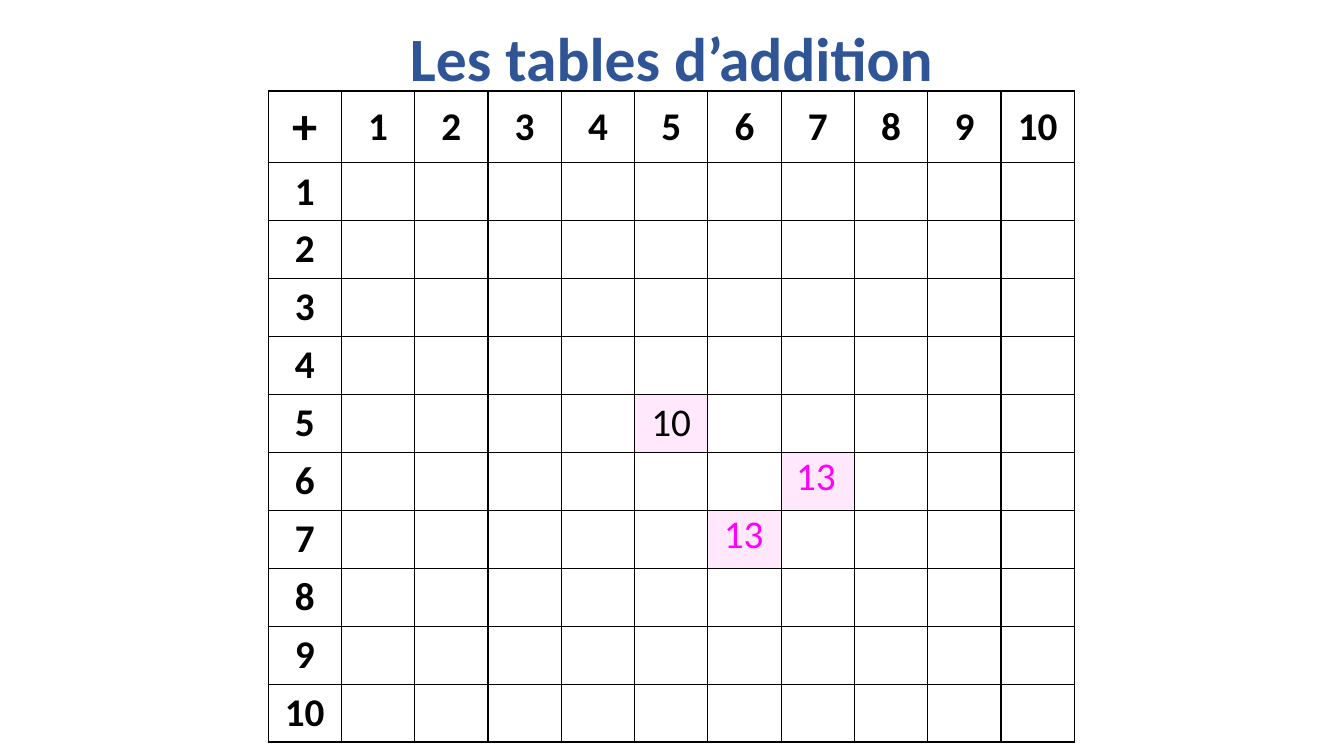
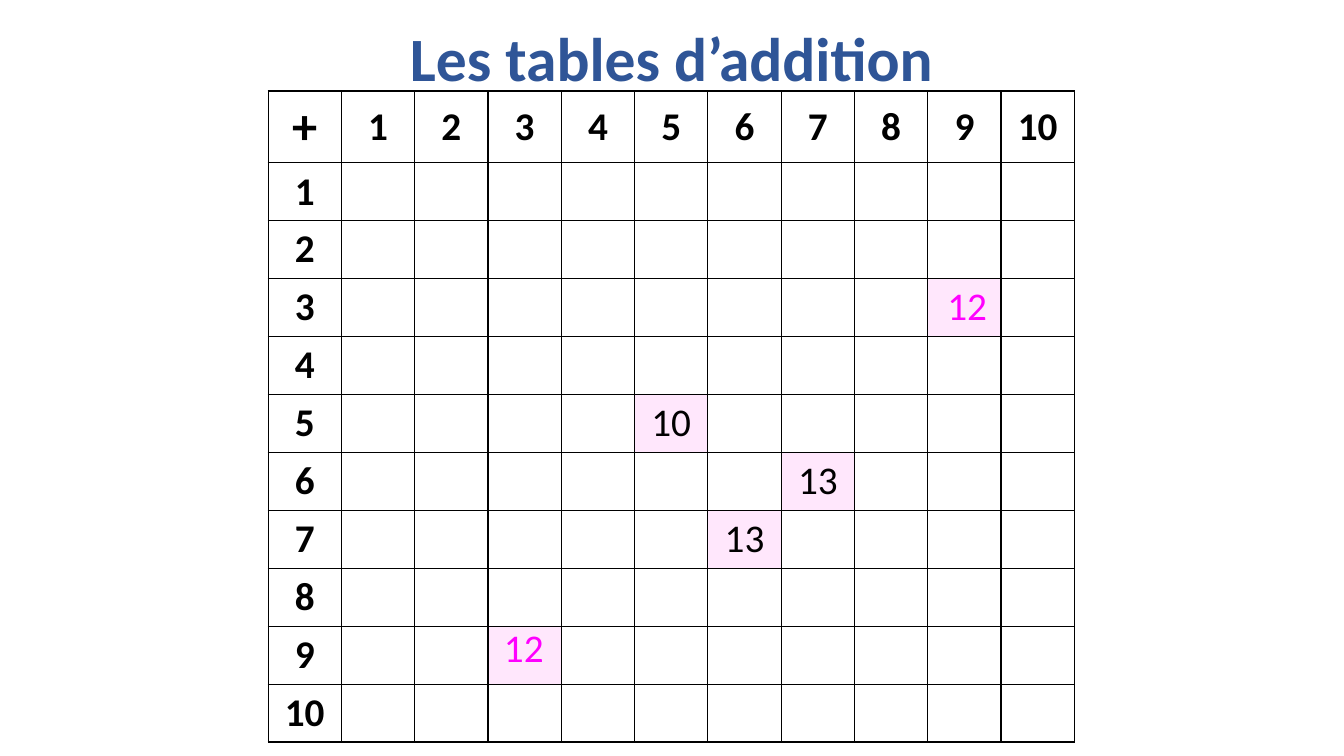
from lxml import etree
from pptx import Presentation
from pptx.dml.color import RGBColor
from pptx.enum.text import MSO_ANCHOR, MSO_AUTO_SIZE, PP_ALIGN
from pptx.oxml.ns import qn
from pptx.util import Pt

MIDDLE, TOP = MSO_ANCHOR.MIDDLE, MSO_ANCHOR.TOP
CENTER = PP_ALIGN.CENTER
GROW = MSO_AUTO_SIZE.SHAPE_TO_FIT_TEXT

COLORS = {
    "title": "2F5597",
    "text": "000000",
    "border": "000000",
    "paper": "FFFFFF",
    "highlight": "FFE7FC",
    "answer": "FF00FF",
}
FONT = "Calibri"
TITLE = "Les tables d’addition"
NUMBERS = range(1, 11)

# "known" lists (row, column) sums already in the table;
# "new" lists (row, column, shift right, shift down) sums laid over it.
SLIDES = [
    {"known": [(5, 5)],
     "new": [(7, 6, 0, -4.6), (6, 7, -0.8, -4.2)]},
    {"known": [(5, 5), (6, 7), (7, 6)],
     "new": [(9, 3, 0, -6), (3, 9, 2.5, -1.7)]},
]

SLIDE_SIZE = (960, 540)
TITLE_BOX = (66, -8, 828, 104.4)
TABLE_LEFT, TABLE_TOP = 191.5, 65
COLUMN_WIDTH = 52.36
HEADER_HEIGHT, ROW_HEIGHT = 51.2, 41.4


def write(frame, text, size=28, color="text", bold=False, spacing=None):
    paragraph = frame.paragraphs[0]
    paragraph.alignment = CENTER
    if spacing:
        paragraph.line_spacing = spacing
    run = paragraph.add_run()
    run.text = str(text)
    run.font.name = FONT
    run.font.size = Pt(size)
    run.font.bold = bold
    run.font.color.rgb = RGBColor.from_string(COLORS[color])


def add_text(slide, box, text, anchor=TOP, grow=False, **style):
    shape = slide.shapes.add_textbox(*(Pt(length) for length in box))
    frame = shape.text_frame
    frame.word_wrap = True
    frame.vertical_anchor = anchor
    if grow:
        frame.auto_size = GROW
    write(frame, text, **style)


def add_borders(cell):
    properties = cell._tc.get_or_add_tcPr()
    for side in ("a:lnL", "a:lnR", "a:lnT", "a:lnB"):
        line = etree.SubElement(properties, qn(side), w=str(Pt(1)))
        fill = etree.SubElement(line, qn("a:solidFill"))
        etree.SubElement(fill, qn("a:srgbClr"), val=COLORS["border"])


def fill_cell(cell, color):
    cell.fill.solid()
    cell.fill.fore_color.rgb = RGBColor.from_string(COLORS[color])


def add_addition_table(slide, known, highlighted):
    count = len(NUMBERS) + 1
    height = HEADER_HEIGHT + len(NUMBERS) * ROW_HEIGHT
    table = slide.shapes.add_table(
        count, count, Pt(TABLE_LEFT), Pt(TABLE_TOP),
        Pt(count * COLUMN_WIDTH), Pt(height)).table
    table.first_row = table.horz_banding = False
    for column in table.columns:
        column.width = Pt(COLUMN_WIDTH)
    for index, row in enumerate(table.rows):
        row.height = Pt(ROW_HEIGHT if index else HEADER_HEIGHT)
        for position, cell in enumerate(row.cells):
            cell.vertical_anchor = MIDDLE
            add_borders(cell)
            if index == 0 or position == 0:
                fill_cell(cell, "paper")
                is_corner = index == position
                write(cell.text_frame, "+" if is_corner else index + position,
                      size=36 if is_corner else 28, bold=True)
            elif (index, position) in highlighted:
                fill_cell(cell, "highlight")
            else:
                cell.fill.background()
            if (index, position) in known:
                write(cell.text_frame, index + position)


def add_new_sum(slide, row, column, shift_right, shift_down):
    left = TABLE_LEFT + column * COLUMN_WIDTH + shift_right
    top = TABLE_TOP + HEADER_HEIGHT + (row - 1) * ROW_HEIGHT + shift_down
    add_text(slide, (left, top, 51.1, 41.2), row + column,
             color="answer", grow=True)


def main():
    presentation = Presentation()
    presentation.slide_width, presentation.slide_height = map(Pt, SLIDE_SIZE)
    for content in SLIDES:
        slide = presentation.slides.add_slide(presentation.slide_layouts[6])
        add_text(slide, TITLE_BOX, TITLE, anchor=MIDDLE, size=44,
                 color="title", bold=True, spacing=0.9)
        new_cells = [(row, column) for row, column, *_ in content["new"]]
        add_addition_table(slide, content["known"], content["known"] + new_cells)
        for new_sum in content["new"]:
            add_new_sum(slide, *new_sum)
    presentation.save("out.pptx")


if __name__ == "__main__":
    main()
